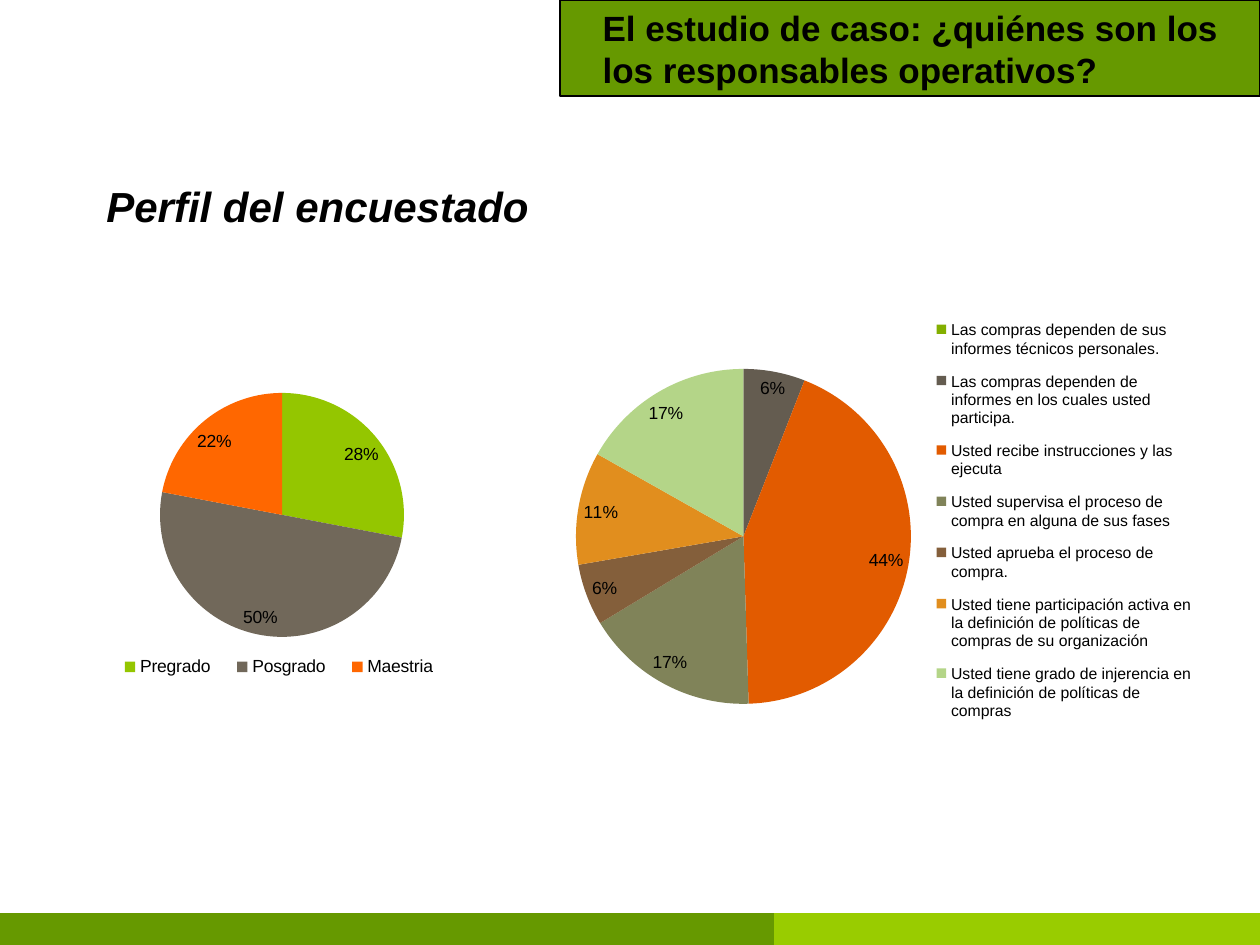
from lxml import etree
from pptx import Presentation
from pptx.chart.data import CategoryChartData
from pptx.dml.color import RGBColor
from pptx.enum.chart import XL_CHART_TYPE, XL_LABEL_POSITION, XL_LEGEND_POSITION
from pptx.enum.shapes import MSO_SHAPE
from pptx.enum.text import MSO_ANCHOR, PP_ALIGN
from pptx.oxml.ns import qn
from pptx.util import Pt

PIE = XL_CHART_TYPE.PIE
BEST_FIT = XL_LABEL_POSITION.BEST_FIT
LEGEND_BOTTOM, LEGEND_RIGHT = XL_LEGEND_POSITION.BOTTOM, XL_LEGEND_POSITION.RIGHT
RECTANGLE = MSO_SHAPE.RECTANGLE
TOP, LEFT = MSO_ANCHOR.TOP, PP_ALIGN.LEFT

SCALE = 914400 / 126
WIDTH, HEIGHT = 1260, 945
FONT = "Arial"
BLACK = RGBColor(0x00, 0x00, 0x00)
GREEN = RGBColor(0x66, 0x99, 0x00)
LIME = RGBColor(0x99, 0xCC, 0x00)

STUDIES = [
    ("Pregrado", 28, RGBColor(0x94, 0xC6, 0x00)),
    ("Posgrado", 50, RGBColor(0x71, 0x68, 0x5A)),
    ("Maestria", 22, RGBColor(0xFF, 0x67, 0x00)),
]
ROLES = [
    ("Las compras dependen de sus informes técnicos personales.", 0,
     RGBColor(0x83, 0xAF, 0x00)),
    ("Las compras dependen de informes en los cuales usted participa.", 6,
     RGBColor(0x64, 0x5C, 0x50)),
    ("Usted recibe instrucciones y las ejecuta", 44,
     RGBColor(0xE2, 0x5B, 0x00)),
    ("Usted supervisa el proceso de compra en alguna de sus fases", 17,
     RGBColor(0x80, 0x83, 0x59)),
    ("Usted aprueba el proceso de compra.", 6,
     RGBColor(0x84, 0x5F, 0x3B)),
    ("Usted tiene participación activa en la definición de políticas de "
     "compras de su organización", 11,
     RGBColor(0xE1, 0x8E, 0x1E)),
    ("Usted tiene grado de injerencia en la definición de políticas de compras", 17,
     RGBColor(0xB4, 0xD5, 0x88)),
]


def px(length):
    return round(length * SCALE)


def emu_box(box):
    return [px(length) for length in box]


def style_font(font, size, bold=False, italic=False):
    font.name, font.size = FONT, Pt(size)
    font.bold, font.italic = bold, italic
    font.color.rgb = BLACK


def add_bar(slide, box, color, outlined=False):
    bar = slide.shapes.add_shape(RECTANGLE, *emu_box(box))
    bar.shadow.inherit = False
    bar.fill.solid()
    bar.fill.fore_color.rgb = color
    if outlined:
        bar.line.color.rgb = BLACK
        bar.line.width = Pt(0.75)
    else:
        bar.line.fill.background()
    return bar


def add_header(slide, box):
    left, top, width, height = box
    band = add_bar(slide, box, GREEN, outlined=True)
    title = slide.shapes.title
    title.element.addprevious(band.element)
    title.left, title.top, title.width, title.height = emu_box(
        (left + 30, top, width - 54, height))
    frame = title.text_frame
    frame.text = "El estudio de caso: ¿quiénes son los los responsables operativos?"
    frame.word_wrap = True
    frame.vertical_anchor = TOP
    heading = frame.paragraphs[0]
    heading.alignment = LEFT
    style_font(heading.runs[0].font, 20, bold=True)


def add_footer(slide, box):
    left, top, width, height = box
    split = 774
    add_bar(slide, (left, top, split, height), GREEN)
    add_bar(slide, (left + split, top, width - split, height), LIME)


def add_subtitle(slide, box):
    subtitle = slide.shapes.add_textbox(*emu_box(box))
    frame = subtitle.text_frame
    frame.word_wrap = True
    frame.text = "Perfil del encuestado"
    style_font(frame.paragraphs[0].runs[0].font, 24, bold=True, italic=True)


def set_layout(part, area, chart_box, inner=False):
    """Fix a chart part at an area in px, measured from the chart's corner."""
    for old_layout in part.findall(qn("c:layout")):
        part.remove(old_layout)
    layout = etree.Element(qn("c:layout"))
    manual = etree.SubElement(layout, qn("c:manualLayout"))
    settings = [("layoutTarget", "inner")] if inner else []
    settings += [("xMode", "edge"), ("yMode", "edge")]
    sizes = chart_box[2:] * 2
    settings += [(name, f"{length / size:.4f}")
                 for name, length, size in zip("xywh", area, sizes)]
    for name, value in settings:
        etree.SubElement(manual, qn(f"c:{name}")).set("val", value)
    if inner:
        part.insert(0, layout)
    else:
        part.find(qn("c:legendPos")).addnext(layout)


def add_pie(slide, box, slices, pie_area, legend_area, legend_position, legend_size):
    data = CategoryChartData()
    data.categories = [label for label, _, _ in slices]
    data.add_series("Series 1", [value for _, value, _ in slices])
    chart = slide.shapes.add_chart(PIE, *emu_box(box), data).chart
    chart.has_title = False
    style_font(chart.font, 10)

    plot = chart.plots[0]
    plot.vary_by_categories = True
    for index, (_, _, color) in enumerate(slices):
        fill = plot.series[0].points[index].format.fill
        fill.solid()
        fill.fore_color.rgb = color

    plot.has_data_labels = True
    labels = plot.data_labels
    labels.show_percentage, labels.show_value = True, False
    labels.number_format, labels.number_format_is_linked = "0%;;", False
    labels.position = BEST_FIT
    style_font(labels.font, 10)

    chart.has_legend = True
    legend = chart.legend
    legend.position = legend_position
    legend.include_in_layout = False
    style_font(legend.font, legend_size)

    chart_xml = chart.element.find(qn("c:chart"))
    set_layout(chart_xml.find(qn("c:plotArea")), pie_area, box, inner=True)
    set_layout(chart_xml.find(qn("c:legend")), legend_area, box)


def main():
    presentation = Presentation()
    presentation.slide_width, presentation.slide_height = px(WIDTH), px(HEIGHT)
    slide = presentation.slides.add_slide(presentation.slide_layouts[5])
    add_header(slide, (560, 0, 700, 96))
    add_footer(slide, (0, 913, WIDTH, 32))
    add_subtitle(slide, (94, 174, 460, 63))
    add_pie(slide, (94, 335, 377, 357), STUDIES,
            (66, 58, 244, 244), (10, 317, 350, 30), LEGEND_BOTTOM, 10)
    add_pie(slide, (532, 295, 672, 457), ROLES,
            (44, 74, 335, 335), (402, 12, 260, 428), LEGEND_RIGHT, 9)
    presentation.save("out.pptx")


if __name__ == "__main__":
    main()
